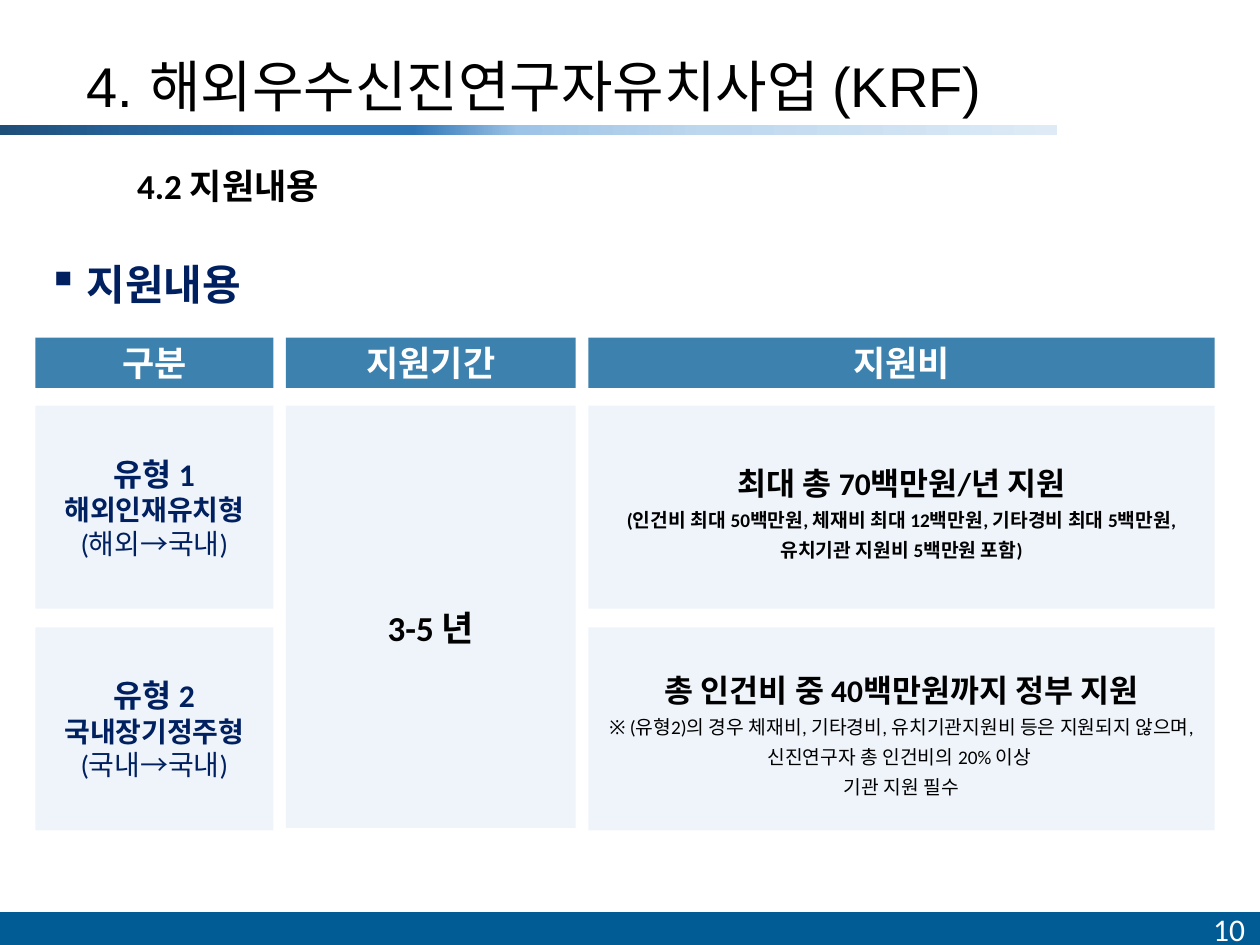
from lxml.etree import SubElement
from pptx import Presentation
from pptx.dml.color import RGBColor
from pptx.enum.shapes import MSO_SHAPE
from pptx.enum.text import MSO_ANCHOR, MSO_AUTO_SIZE, PP_ALIGN
from pptx.oxml.ns import qn
from pptx.util import Inches, Pt

NAVY, BLACK, WHITE, BLUE, PALE = "002060", "000000", "FFFFFF", "015C95", "DEEBF7"

# Column left and width, row top and height
COLUMNS = [(0.28, 1.89), (2.27, 2.3), (4.67, 4.97)]
HEADER_ROW, TYPE_1_ROW, TYPE_2_ROW = (2.68, 0.4), (3.22, 1.61), (4.98, 1.61)
BOTH_ROWS = (3.22, 3.35)

HEADERS = ["구분", "지원기간", "지원비"]

# Column, row, text colour, line spacing, lines of (text, size, bold)
CELLS = [
    (0, TYPE_1_ROW, NAVY, 1, [
        ("유형 1", 18, True), ("해외인재유치형", 16, True), ("(해외→국내)", 16, False)]),
    (0, TYPE_2_ROW, NAVY, 1, [
        ("유형 2", 18, True), ("국내장기정주형", 16, True), ("(국내→국내)", 16, False)]),
    (1, BOTH_ROWS, BLACK, 1.5, [("3-5 년", 20, True)]),
    (2, TYPE_1_ROW, BLACK, 1.3, [
        ("최대 총 70백만원/년 지원", 18, True),
        ("(인건비 최대 50백만원, 체재비 최대 12백만원, 기타경비 최대 5백만원, "
         "유치기관 지원비 5백만원 포함)", 11, True)]),
    (2, TYPE_2_ROW, BLACK, 1.3, [
        ("총 인건비 중 40백만원까지 정부 지원", 18, True),
        ("※ (유형2)의 경우 체재비, 기타경비, 유치기관지원비 등은 지원되지 않으며, "
         "신진연구자 총 인건비의 20% 이상 ", 11, False),
        ("기관 지원 필수", 11, False)]),
]

RULE_STOPS = [(0, "DEEBF7"), (33, "BDD7EE"), (51, "9DC3E6"), (61, "2E75B6"),
              (73, "2E75B6"), (88, "276298"), (100, "1F4E79")]


def rgb(value):
    return RGBColor.from_string(value)


def add_bar(page, place, color, opacity=100):
    bar = page.shapes.add_shape(MSO_SHAPE.RECTANGLE, *map(Inches, place))
    bar.shadow.inherit = False
    bar.line.fill.background()
    bar.fill.solid()
    bar.fill.fore_color.rgb = rgb(color)
    if opacity < 100:
        tint = bar.fill._xPr.find(qn("a:solidFill"))[0]
        SubElement(tint, qn("a:alpha"), val=str(opacity * 1000))
    return bar


def add_gradient(bar, stops):
    """Replace the two default gradient stops with the given ones."""
    bar.fill.gradient()
    bar.fill.gradient_angle = 0
    stop_list = bar.fill._xPr.find(qn("a:gradFill")).find(qn("a:gsLst"))
    for stop in list(stop_list):
        stop_list.remove(stop)
    for position, color in stops:
        stop = SubElement(stop_list, qn("a:gs"), pos=str(position * 1000))
        SubElement(stop, qn("a:srgbClr"), val=color)


def write(box, lines, color, font="Calibri", **paragraph_format):
    frame = box.text_frame
    frame.word_wrap = True
    for index, (text, size, bold) in enumerate(lines):
        para = frame.add_paragraph() if index else frame.paragraphs[0]
        for name, value in paragraph_format.items():
            setattr(para, name, value)
        span = para.add_run()
        span.text = text
        for name, value in {"name": font, "size": Pt(size), "bold": bold}.items():
            setattr(span.font, name, value)
        span.font.color.rgb = rgb(color)


def add_text(page, place, line, color, **text_format):
    box = page.shapes.add_textbox(*map(Inches, place))
    write(box, [line], color, **text_format)
    return box


def add_cell(page, column, row, fill, opacity, lines, color, spacing=1):
    (left, width), (top, height) = COLUMNS[column], row
    cell = add_bar(page, (left, top, width, height), fill, opacity)
    cell.text_frame.vertical_anchor = MSO_ANCHOR.MIDDLE
    write(cell, lines, color, alignment=PP_ALIGN.CENTER, line_spacing=spacing)


def add_bullet(para, mark, indent):
    properties = para._p.get_or_add_pPr()
    properties.set("marL", str(Inches(indent)))
    properties.set("indent", str(-Inches(indent)))
    SubElement(properties, qn("a:buChar"), char=mark)


def main():
    deck = Presentation()
    deck.slide_width, deck.slide_height = Inches(10), Inches(7.5)
    page = deck.slides.add_slide(deck.slide_layouts[6])

    add_bar(page, (0, 7.24, 10, 0.27), BLUE)
    title_rule = add_bar(page, (0, 0.99, 8.39, 0.08), BLUE)
    title_rule.rotation = 180
    add_gradient(title_rule, RULE_STOPS)

    title = add_text(page, (0.59, 0.21, 8.5, 0.79),
                     ("4. 해외우수신진연구자유치사업 (KRF)", 32, False),
                     BLACK, font="Arial", line_spacing=0.9)
    title.text_frame.vertical_anchor = MSO_ANCHOR.BOTTOM
    number = add_text(page, (9.53, 7.17, 0.63, 0.4), ("10", 18, False), WHITE)
    section = add_text(page, (0.99, 1.26, 5.2, 0.44), ("4.2 지원내용", 20, True), BLACK)
    heading = add_text(page, (0.28, 2, 2.71, 0.5), ("지원내용", 24, True), NAVY)
    add_bullet(heading.text_frame.paragraphs[0], "▪", 0.31)
    for box in (number, section, heading):
        box.text_frame.auto_size = MSO_AUTO_SIZE.SHAPE_TO_FIT_TEXT

    for column, header in enumerate(HEADERS):
        add_cell(page, column, HEADER_ROW, BLUE, 76, [(header, 20, True)], WHITE)
    for column, row, color, spacing, lines in CELLS:
        add_cell(page, column, row, PALE, 50, lines, color, spacing)

    deck.save("out.pptx")


if __name__ == "__main__":
    main()
